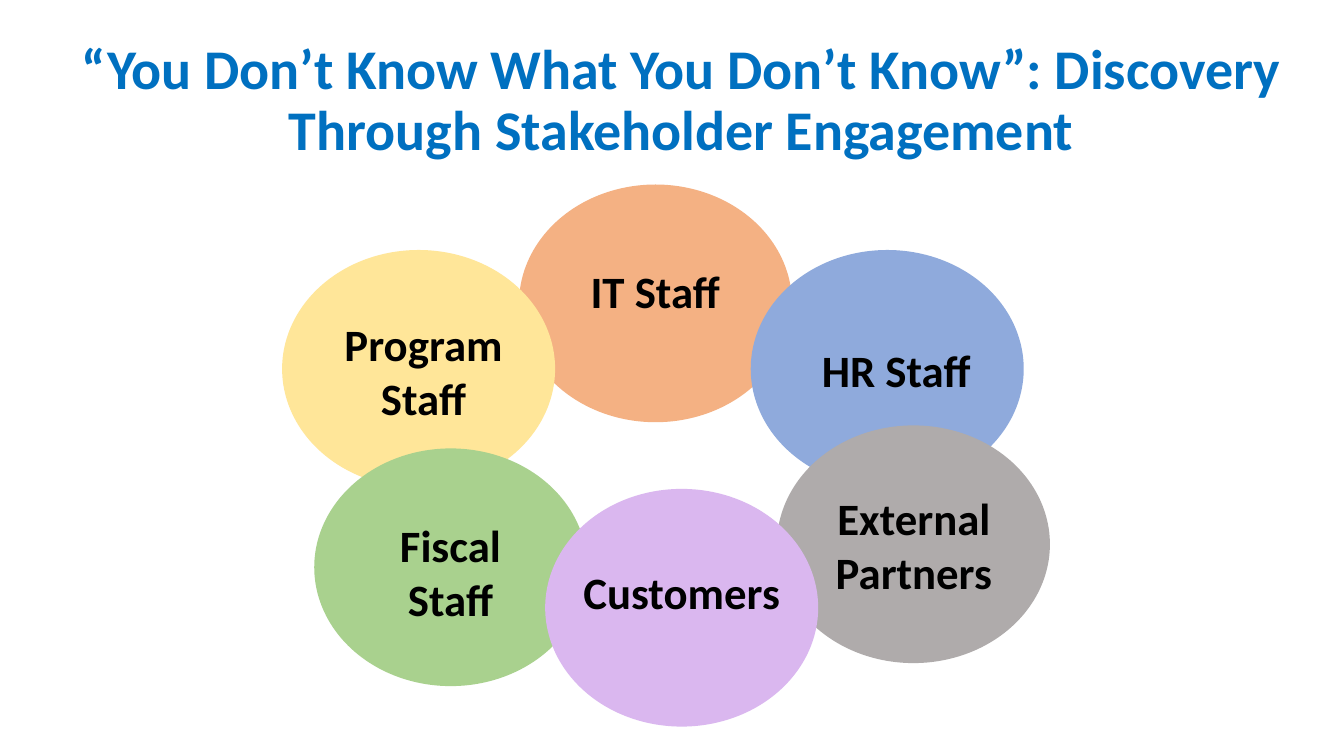
from pptx import Presentation
from pptx.dml.color import RGBColor
from pptx.enum.shapes import MSO_SHAPE
from pptx.enum.text import MSO_ANCHOR, MSO_AUTO_SIZE, PP_ALIGN
from pptx.util import Cm, Pt

BLUE = RGBColor(0x00, 0x70, 0xC0)
BLACK = RGBColor(0x00, 0x00, 0x00)
ORANGE = RGBColor(0xF4, 0xB1, 0x83)
YELLOW = RGBColor(0xFF, 0xE6, 0x99)
GREEN = RGBColor(0xA9, 0xD1, 0x8E)
PERIWINKLE = RGBColor(0x8F, 0xAA, 0xDC)
GRAY = RGBColor(0xAF, 0xAB, 0xAB)
LILAC = RGBColor(0xDA, 0xB7, 0xEF)

OVAL_WIDTH, OVAL_HEIGHT = Cm(6.88), Cm(5.99)
LABEL_WIDTH = 4.83
ONE_LINE, TWO_LINES = 1.63, 3.0

STAKEHOLDERS = [
    ("IT Staff", ORANGE, (13.08, 4.65), (14.1, 6.53, LABEL_WIDTH, ONE_LINE)),
    ("Program Staff", YELLOW, (7.11, 6.3), (8.26, 7.85, LABEL_WIDTH, TWO_LINES)),
    ("Fiscal Staff", GREEN, (7.92, 11.3), (8.94, 12.93, LABEL_WIDTH, TWO_LINES)),
    ("HR Staff", PERIWINKLE, (18.92, 6.3), (20.17, 8.51, LABEL_WIDTH, ONE_LINE)),
    ("External Partners", GRAY, (19.58, 10.72), (20.62, 12.24, LABEL_WIDTH, TWO_LINES)),
    ("Customers", LILAC, (13.74, 12.32), (14.12, 14.1, 6.12, ONE_LINE)),
]


def write_text(box, text, size, color, anchor=MSO_ANCHOR.TOP, spacing=1.0,
               auto_size=MSO_AUTO_SIZE.NONE):
    frame = box.text_frame
    frame.word_wrap = True
    frame.auto_size = auto_size
    frame.vertical_anchor = anchor
    para = frame.paragraphs[0]
    para.alignment = PP_ALIGN.CENTER
    para.line_spacing = spacing
    span = para.add_run()
    span.text = text
    span.font.name = "Calibri"
    span.font.size = Pt(size)
    span.font.bold = True
    span.font.color.rgb = color


def add_title(page, text):
    title = page.shapes.title
    title.left, title.top = Cm(1.52), Cm(0.69)
    title.width, title.height = Cm(31.29), Cm(3.76)
    write_text(title, text, size=40, color=BLUE, anchor=MSO_ANCHOR.MIDDLE, spacing=0.9)


def add_stakeholder(page, name, color, oval_corner, label_area):
    group = page.shapes.add_group_shape()
    left, top = map(Cm, oval_corner)
    oval = group.shapes.add_shape(MSO_SHAPE.OVAL, left, top, OVAL_WIDTH, OVAL_HEIGHT)
    oval.shadow.inherit = False
    oval.fill.solid()
    oval.fill.fore_color.rgb = color
    oval.line.fill.background()
    label = group.shapes.add_textbox(*map(Cm, label_area))
    write_text(label, name, size=32, color=BLACK, auto_size=MSO_AUTO_SIZE.SHAPE_TO_FIT_TEXT)


def main():
    deck = Presentation()
    deck.slide_width, deck.slide_height = Cm(33.87), Cm(19.05)
    page = deck.slides.add_slide(deck.slide_layouts[5])
    add_title(page, "“You Don’t Know What You Don’t Know”: Discovery Through Stakeholder Engagement")
    for stakeholder in STAKEHOLDERS:
        add_stakeholder(page, *stakeholder)
    deck.save("out.pptx")


if __name__ == "__main__":
    main()
